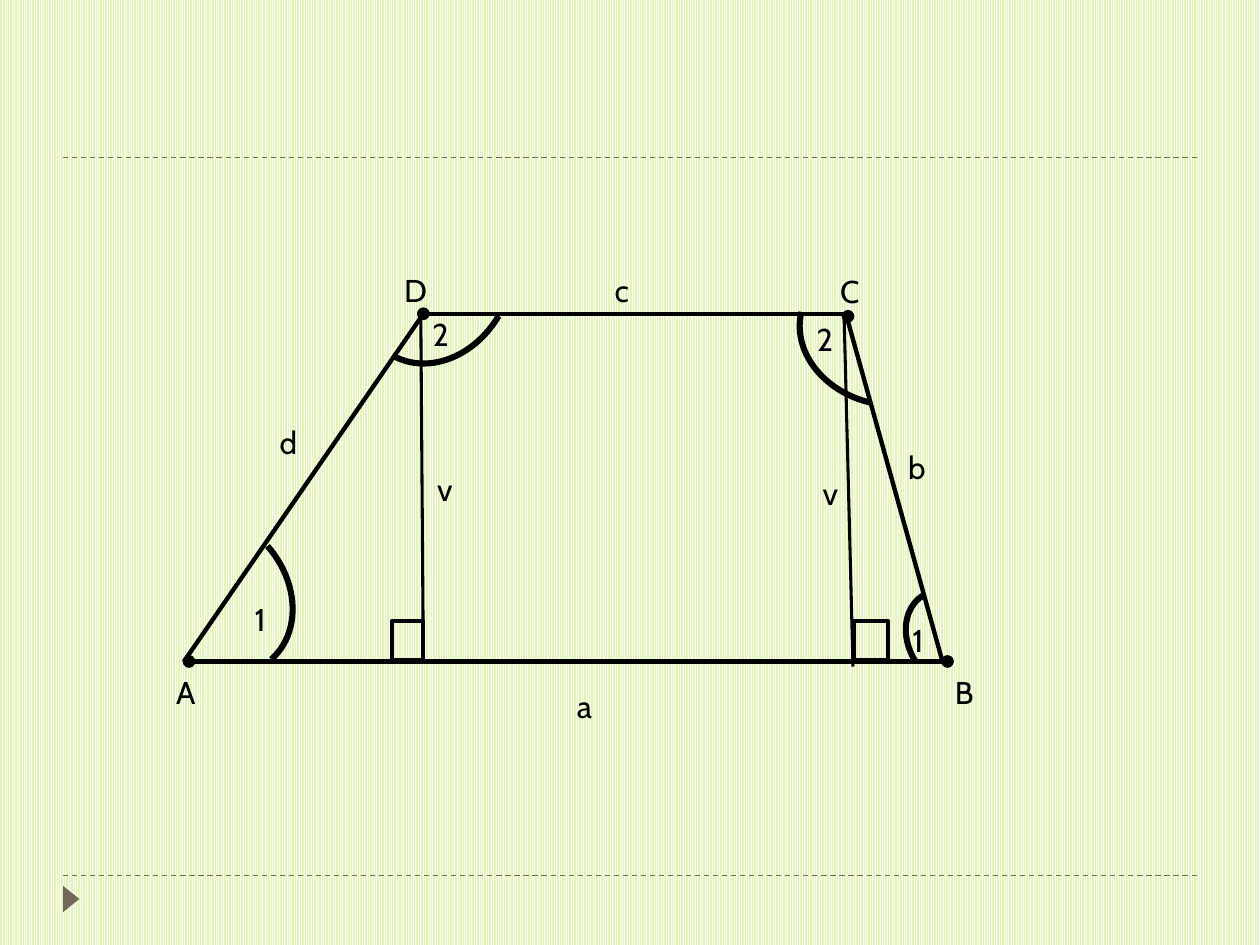
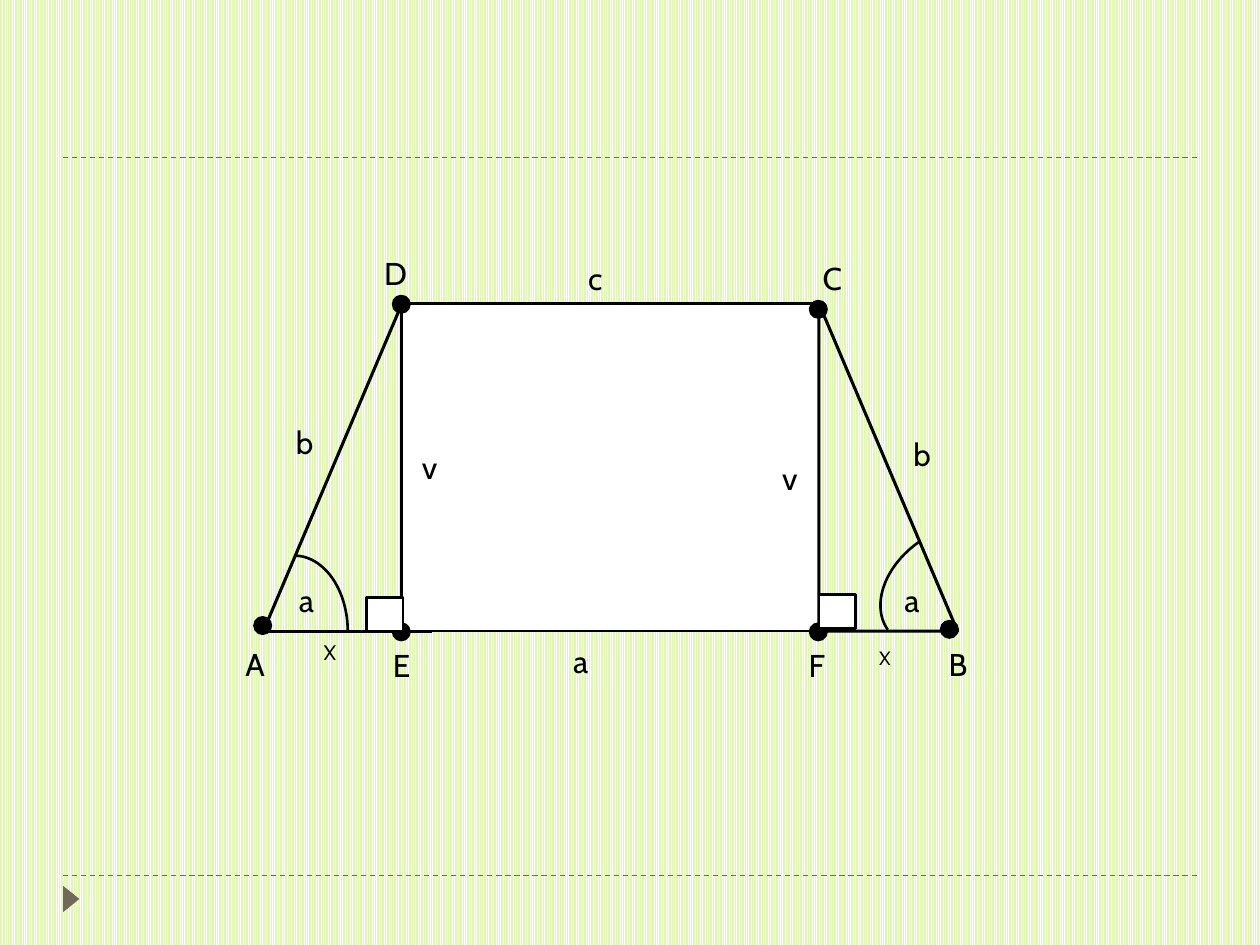
from lxml import etree
from pptx import Presentation
from pptx.dml.color import RGBColor
from pptx.enum import dml, shapes, text
from pptx.oxml import ns
from pptx.util import Inches, Pt

BLACK = RGBColor(0x00, 0x00, 0x00)
WHITE = RGBColor(0xFF, 0xFF, 0xFF)
LIME = RGBColor(0xDF, 0xF7, 0xAE)
TAUPE = RGBColor(0x71, 0x68, 0x5A)
FONT = "Cabin"
PRESET = shapes.MSO_SHAPE


def segment(slide, start, end, weight, color=BLACK):
    line = slide.shapes.add_connector(
        shapes.MSO_CONNECTOR.STRAIGHT,
        *(Inches(value) for value in (*start, *end)))
    line.line.color.rgb = color
    line.line.width = Pt(weight)
    etree.SubElement(line.element.spPr, ns.qn("a:effectLst"))
    return line


def figure(slide, preset, box, weight=None, fill=None, rotation=0):
    """Add a preset shape; without a weight or a fill it has none."""
    shape = slide.shapes.add_shape(preset, *(Inches(value) for value in box))
    shape.shadow.inherit = False
    shape.rotation = rotation
    if fill is None:
        shape.fill.background()
    else:
        shape.fill.solid()
        shape.fill.fore_color.rgb = fill
    if weight is None:
        shape.line.fill.background()
    else:
        shape.line.color.rgb = BLACK
        shape.line.width = Pt(weight)
    return shape


def vertices(slide, corners, size):
    """Mark each (left, top) corner with a round dot."""
    for left, top in corners:
        figure(slide, PRESET.OVAL, (left, top, size, size), 1.5, BLACK)


def label(slide, wording, left, top, width, size=18):
    height = 0.4 if size == 18 else 0.3
    box = slide.shapes.add_textbox(
        Inches(left), Inches(top), Inches(width), Inches(height))
    frame = box.text_frame
    frame.word_wrap = True
    frame.auto_size = text.MSO_AUTO_SIZE.SHAPE_TO_FIT_TEXT
    paragraph = frame.paragraphs[0]
    paragraph.text = wording
    paragraph.font.name = FONT
    paragraph.font.size = Pt(size)
    paragraph.font.color.rgb = BLACK


def labels(slide, entries):
    for entry in entries:
        label(slide, *entry)


def decorate_master(master, slide):
    """Set the striped background and move the rules and marker to the master."""
    fill = master.background.fill
    fill.patterned()
    fill.pattern = dml.MSO_PATTERN.LIGHT_VERTICAL
    fill.fore_color.rgb = WHITE
    fill.back_color.rgb = LIME

    rules = [segment(slide, (0.5, y), (9.5, y), 0.75, TAUPE)
             for y in (6.95, 1.25)]
    for rule in rules:
        rule.line.dash_style = dml.MSO_LINE.DASH
    marker = figure(slide, PRESET.ISOSCELES_TRIANGLE,
                    (0.46, 7.07, 0.21, 0.13), fill=TAUPE, rotation=90)
    for part in (*rules, marker):
        master.shapes.element.append(part.element)


def draw_general_trapezoid(slide):
    base = 5.25
    a, b, d = (1.46, base), (7.48, base), (3.34, 2.52)
    segment(slide, (3.35, 2.49), (6.73, 2.49), 2.5)
    segment(slide, d, a, 2.5)
    segment(slide, (6.73, 2.55), b, 2.5)
    segment(slide, a, (7.52, base), 2.5)
    vertices(slide, [(3.32, 2.45), (6.69, 2.47), (1.46, 5.21), (7.48, 5.21)],
             0.08)

    segment(slide, d, (3.36, base), 1.75)
    segment(slide, (6.7, 2.54), (6.77, 5.29), 1.75)
    for left, width in ((3.11, 0.25), (6.78, 0.27)):
        figure(slide, PRESET.RECTANGLE, (left, 4.93, width, 0.31), 2.5)

    wide, narrow = (1.39, 1.14), (0.82, 0.65)
    for left, top, extent, rotation in (
            (2.77, 1.65, wide, 120.3), (6.34, 2.07, wide, 193.7),
            (1, 4.14, wide, 48.7), (7.13, 4.75, narrow, 238.1)):
        figure(slide, PRESET.ARC, (left, top, *extent), 3.5, rotation=rotation)

    labels(slide, [
        ("A", 1.3, 5.29, 0.39), ("B", 7.48, 5.29, 0.28),
        ("D", 3.11, 2.1, 0.47), ("C", 6.57, 2.11, 0.47),
        ("a", 4.48, 5.4, 0.59), ("b", 7.11, 3.51, 0.52),
        ("d", 2.12, 3.31, 0.55), ("c", 4.78, 2.1, 0.62),
        ("v", 3.37, 3.68, 0.31), ("v", 6.43, 3.71, 0.28),
        ("1", 1.93, 4.71, 0.19), ("1", 7.24, 4.88, 0.08),
        ("2", 3.41, 2.45, 0.12), ("2", 6.44, 2.49, 0.14),
    ])


def draw_isosceles_trapezoid(slide):
    top, base, left, right, overhang = 2.41, 5.01, 3.19, 6.5, 1.1
    height = base - top
    a, d = (left - overhang, base), (left, top)
    figure(slide, PRESET.RECTANGLE, (left, top, right - left, height),
           1.5, WHITE)
    figure(slide, PRESET.RIGHT_TRIANGLE, (right, top, overhang, height), 1.75)
    segment(slide, d, (left, base), 1.75)
    segment(slide, d, a, 1.75)
    segment(slide, a, (3.43, base), 1.75)
    vertices(slide, [(2.02, 4.9), (3.12, 2.35), (6.43, 2.39),
                     (3.12, 4.95), (6.43, 4.95), (7.47, 4.93)], 0.13)

    labels(slide, [
        ("v", 3.25, 3.51, 0.41), ("v", 6.11, 3.59, 0.49),
        ("A", 1.85, 5.07, 0.47), ("B", 7.43, 5.07, 0.5),
        ("C", 6.43, 2.01, 0.47), ("D", 2.95, 1.97, 0.71),
        ("E", 3.02, 5.08, 0.55), ("F", 6.32, 5.08, 0.49),
        ("X", 2.47, 5.03, 0.29, 12), ("X", 6.88, 5.08, 0.2, 11),
        ("a", 4.45, 5.05, 0.63), ("b", 2.25, 3.31, 0.45),
        ("b", 7.15, 3.4, 0.39), ("c", 4.57, 2.01, 0.39),
        ("a", 2.32, 4.56, 0.15), ("a", 7.08, 4.56, 0.32),
    ])

    for corner in ((2.91, 4.74), (6.5, 4.72)):
        figure(slide, PRESET.RECTANGLE, (*corner, 0.29, 0.27), 1.5, WHITE)
    for corner, rotation in (((1.91, 4.41), 0), ((7.11, 4.05), 234.6)):
        figure(slide, PRESET.ARC, (*corner, 0.85, 1.2), 1.5, rotation=rotation)


def main():
    deck = Presentation()
    deck.slide_width, deck.slide_height = Inches(10), Inches(7.5)
    blank = deck.slide_layouts[6]
    general, isosceles = (deck.slides.add_slide(blank) for _ in range(2))
    decorate_master(deck.slide_master, general)
    draw_general_trapezoid(general)
    draw_isosceles_trapezoid(isosceles)
    deck.save("out.pptx")


if __name__ == "__main__":
    main()
